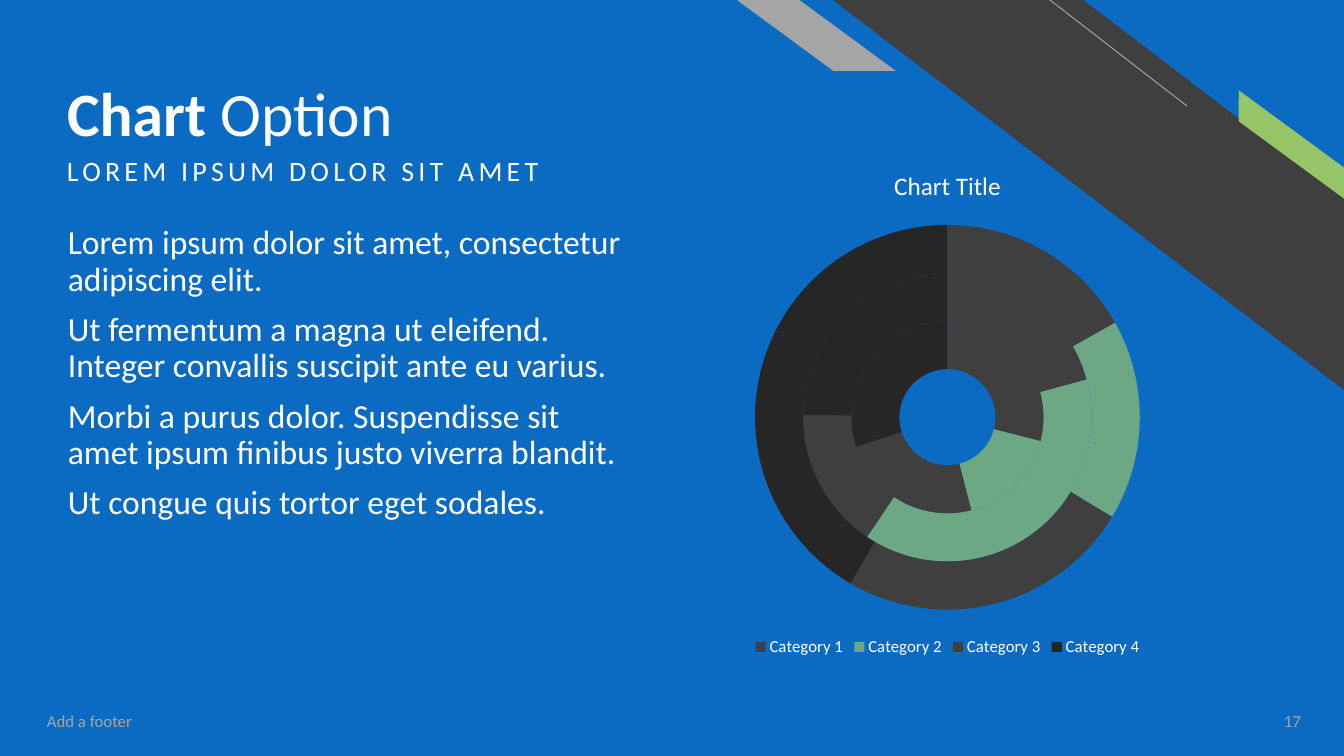
from lxml import etree
from pptx import Presentation
from pptx.chart.data import CategoryChartData as Data
from pptx.dml.color import RGBColor
from pptx.enum.chart import XL_CHART_TYPE as Kind, XL_LEGEND_POSITION as Place
from pptx.enum.shapes import MSO_CONNECTOR as Link, MSO_SHAPE as Form
from pptx.enum.text import MSO_ANCHOR as Anchor, MSO_AUTO_SIZE as Auto, PP_ALIGN as Align
from pptx.oxml.ns import qn
from pptx.util import Pt

UNIT = 12192000 / 1344
BLUE, DARK, GREY, WHITE = "0B6BC3", "3E3F3E", "A5A5A5", "FFFFFF"


def px(*nums):
    return [round(n * UNIT) for n in nums]


def paint(target, color):
    if hasattr(target, "solid"):
        target.solid()
        target = target.fore_color
    target.rgb = RGBColor.from_string(color)


deck = Presentation()
deck.slide_width, deck.slide_height = px(1344, 756)
slide = deck.slides.add_slide(deck.slide_layouts[5])
shapes = slide.shapes
paint(slide.background.fill, BLUE)

decor = [
    (Form.DIAGONAL_STRIPE, (833, 0, 511, 390), 0.51, 0, DARK),
    (Form.PARALLELOGRAM, (1217, 132, 149, 25), 0.72, 36.3, "95C566"),
    (Form.PARALLELOGRAM, (737, 0, 159, 71), 1.36, 0, GREY),
]
for form, box, bend, turn, color in decor:
    shape = shapes.add_shape(form, *px(*box))
    shape.adjustments[0] = bend
    shape.rotation = turn
    shape.shadow.inherit = False
    shape._element.spPr.xfrm.set("flipH", "1")
    paint(shape.fill, color)
    shape.line.fill.background()

line = shapes.add_connector(Link.STRAIGHT, *px(1187, 106, 1050, 0))
paint(line.line.fill, "BFBFBF")
line.line.width = Pt(0.5)
etree.SubElement(line._element.spPr, qn("a:effectLst"))

body = [
    "Lorem ipsum dolor sit amet, consectetur adipiscing elit.",
    "Ut fermentum a magna ut eleifend. Integer convallis suscipit ante eu varius.",
    "Morbi a purus dolor. Suspendisse sit amet ipsum finibus justo viverra blandit.",
    "Ut congue quis tortor eget sodales.",
]
prose = {"line_spacing": 0.9, "space_before": Pt(10), "alignment": Align.LEFT}
head = {**prose, "space_before": Pt(0)}
plain = {"alignment": Align.LEFT}
right = {"alignment": Align.RIGHT}
texts = [
    (shapes.title, (57, 23, 918, 127), [["Chart ", "Option"]], 44, WHITE, Anchor.BOTTOM, head),
    (None, (57, 152, 812, 68), [["LOREM IPSUM DOLOR SIT AMET"]], 20, WHITE, Anchor.TOP, prose),
    (None, (58, 221, 576, 451), [[item] for item in body], 24, WHITE, Anchor.TOP, prose),
    (None, (37, 701, 454, 40), [["Add a footer"]], 12, GREY, Anchor.MIDDLE, plain),
    (None, (1229, 701, 82, 40), [["17"]], 12, GREY, Anchor.MIDDLE, right),
]
for holder, box, paras, size, color, anchor, style in texts:
    shape = holder or shapes.add_textbox(*px(*box))
    shape.left, shape.top, shape.width, shape.height = px(*box)
    frame = shape.text_frame
    frame.word_wrap = True
    frame.auto_size = Auto.NONE
    frame.vertical_anchor = anchor
    if holder:
        frame.margin_bottom = 0
    for i, parts in enumerate(paras):
        para = frame.add_paragraph() if i else frame.paragraphs[0]
        for name, value in style.items():
            setattr(para, name, value)
        for part in parts:
            run = para.add_run()
            run.text = part
            font = {"name": "Calibri", "size": Pt(size), "bold": part == "Chart "}
            for name, value in font.items():
                setattr(run.font, name, value)
            paint(run.font.fill, color)
            if size == 20:
                run.font._element.set("spc", "300")

data = Data()
data.categories = [f"Category {n}" for n in range(1, 5)]
rings = [(29, 17, 24, 30), (21, 39, 16, 25), (17, 17, 25, 42)]
for n, ring in enumerate(rings, 1):
    data.add_series(f"Series {n}", ring)
chart = shapes.add_chart(Kind.DOUGHNUT, *px(556, 148, 783, 513), data).chart
chart.font.name, chart.font.size = "Calibri", Pt(10)
paint(chart.font.fill, "3F3F3F")
chart.has_title = True
chart.chart_title.include_in_layout = False
title = chart.chart_title.text_frame
title.text = "Chart Title"
chart.has_legend = True
legend = chart.legend
legend.position = Place.BOTTOM
legend.include_in_layout = False
for font, size in [(title.paragraphs[0].runs[0].font, 18), (legend.font, 12)]:
    font.name, font.size, font.bold = "Calibri", Pt(size), False
    paint(font.fill, WHITE)

plot = chart.plots[0]
plot.vary_by_categories = True
for ring in plot.series:
    for n, color in enumerate([DARK, "6BA883", DARK, "252625"]):
        point = ring.points[n]
        paint(point.format.fill, color)
        point.format.line.fill.background()

area = chart._chartSpace.chart.plotArea
for old in area.findall(qn("c:layout")):
    area.remove(old)
layout = etree.Element(qn("c:layout"))
manual = etree.SubElement(layout, qn("c:manualLayout"))
frame = {"layoutTarget": "inner", "xMode": "edge", "yMode": "edge",
         "x": 0.25, "y": 0.15, "w": 0.5, "h": 0.75}
for name, value in frame.items():
    etree.SubElement(manual, qn(f"c:{name}")).set("val", str(value))
area.insert(0, layout)

deck.save("out.pptx")
